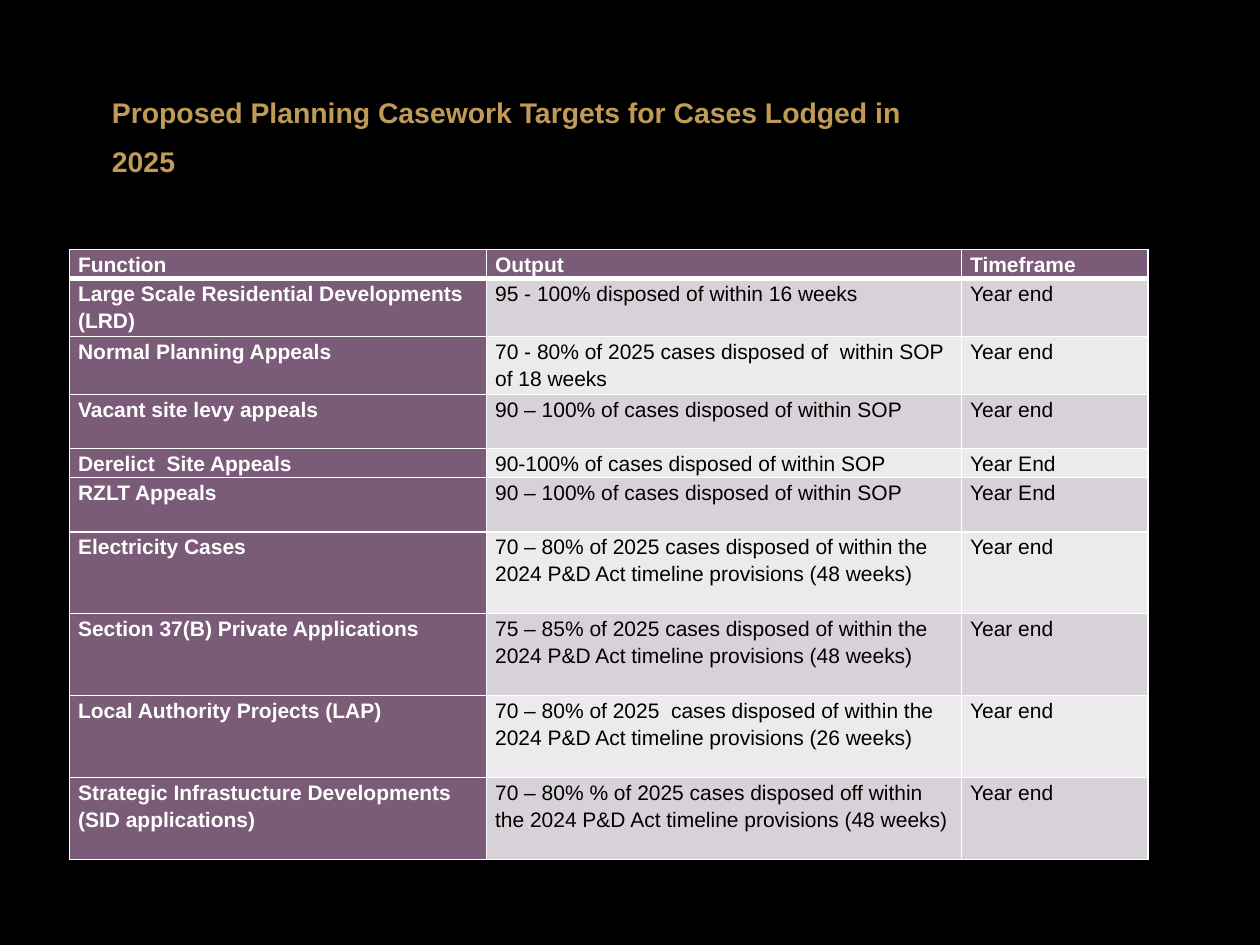
from lxml.etree import SubElement
from pptx import Presentation
from pptx.dml.color import RGBColor
from pptx.enum.text import MSO_ANCHOR
from pptx.oxml.ns import qn
from pptx.util import Inches, Pt

FONT = "Arial"
COLORS = {
    "background": "000000",
    "title": "C09B57",
    "heading": "7A5C79",
    "band_dark": "D7D2D7",
    "band_light": "ECEAEC",
    "light_text": "FFFFFF",
    "dark_text": "000000",
    "border": "FFFFFF",
}

COLUMN_WIDTHS = [3.31, 3.77, 1.48]
ROW_HEIGHTS = [0.2] + [0.43] * 3 + [0.2, 0.43] + [0.65] * 4
HEADER = ("Function", "Output", "Timeframe")
TARGETS = [
    ("Large Scale Residential Developments (LRD)",
     "95 - 100% disposed of within 16 weeks", "Year end"),
    ("Normal Planning Appeals",
     "70 - 80% of 2025 cases disposed of  within SOP of 18 weeks", "Year end"),
    ("Vacant site levy appeals",
     "90 – 100% of cases disposed of within SOP", "Year end"),
    ("Derelict  Site Appeals",
     "90-100% of cases disposed of within SOP", "Year End"),
    ("RZLT Appeals",
     "90 – 100% of cases disposed of within SOP", "Year End"),
    ("Electricity Cases",
     "70 – 80% of 2025 cases disposed of within the 2024 P&D Act timeline provisions (48 weeks)",
     "Year end"),
    ("Section 37(B) Private Applications",
     "75 – 85% of 2025 cases disposed of within the 2024 P&D Act timeline provisions (48 weeks)",
     "Year end"),
    ("Local Authority Projects (LAP)",
     "70 – 80% of 2025  cases disposed of within the 2024 P&D Act timeline provisions (26 weeks)",
     "Year end"),
    ("Strategic Infrastucture Developments (SID applications)",
     "70 – 80% % of 2025 cases disposed off within the 2024 P&D Act timeline provisions (48 weeks)",
     "Year end"),
]


def rgb(name):
    return RGBColor.from_string(COLORS[name])


def add_run(paragraph, text, size, color, bold):
    run = paragraph.add_run()
    run.text = text
    run.font.name = FONT
    run.font.size = Pt(size)
    run.font.bold = bold
    run.font.color.rgb = rgb(color)


def add_title(slide, text):
    title = slide.shapes.add_textbox(Inches(0.79), Inches(0.59), Inches(6.81), Inches(0.95))
    frame = title.text_frame
    frame.word_wrap = True
    frame.vertical_anchor = MSO_ANCHOR.TOP
    paragraph = frame.paragraphs[0]
    paragraph.line_spacing = Pt(28)
    add_run(paragraph, text, 16.2, "title", True)


def set_borders(cell, widths):
    """Draw the cell borders; they must come before the fill in the XML."""
    properties = cell._tc.get_or_add_tcPr()
    for side, width in widths.items():
        line = SubElement(properties, qn(f"a:{side}"), w=str(Pt(width)))
        fill = SubElement(line, qn("a:solidFill"))
        SubElement(fill, qn("a:srgbClr"), val=COLORS["border"])


def fill_cell(cell, text, fill, is_heading, space_after, top=1, bottom=1):
    set_borders(cell, {"lnL": 1, "lnR": 1, "lnT": top, "lnB": bottom})
    cell.fill.solid()
    cell.fill.fore_color.rgb = rgb(fill)
    cell.margin_left = cell.margin_right = Inches(0.07)
    cell.margin_top = cell.margin_bottom = 0
    paragraph = cell.text_frame.paragraphs[0]
    paragraph.line_spacing = 1.15
    paragraph.space_after = Pt(space_after)
    add_run(paragraph, text, 12, "light_text" if is_heading else "dark_text", is_heading)


def add_targets_table(slide):
    table = slide.shapes.add_table(
        len(ROW_HEIGHTS), len(COLUMN_WIDTHS), Inches(0.55), Inches(1.98),
        Inches(sum(COLUMN_WIDTHS)), Inches(sum(ROW_HEIGHTS))).table
    table.first_col = True
    for column, width in zip(table.columns, COLUMN_WIDTHS):
        column.width = Inches(width)
    for row, height in zip(table.rows, ROW_HEIGHTS):
        row.height = Inches(height)

    # Header row, with a thick rule below it
    for cell, label in zip(table.rows[0].cells, HEADER):
        fill_cell(cell, label, "heading", True, 6, bottom=3)

    # Target rows, banded beside the function column
    for number, target in enumerate(TARGETS, start=1):
        band = "band_dark" if number % 2 else "band_light"
        for column, text in enumerate(target):
            is_heading = column == 0
            fill_cell(table.cell(number, column), text, "heading" if is_heading else band,
                      is_heading, 10, top=3 if number == 1 else 1)


def main():
    presentation = Presentation()
    presentation.slide_width = Inches(10)
    presentation.slide_height = Inches(7.5)
    slide = presentation.slides.add_slide(presentation.slide_layouts[6])
    slide.background.fill.solid()
    slide.background.fill.fore_color.rgb = rgb("background")

    add_title(slide, "Proposed Planning Casework Targets for Cases Lodged in 2025")
    add_targets_table(slide)
    presentation.save("out.pptx")


if __name__ == "__main__":
    main()
